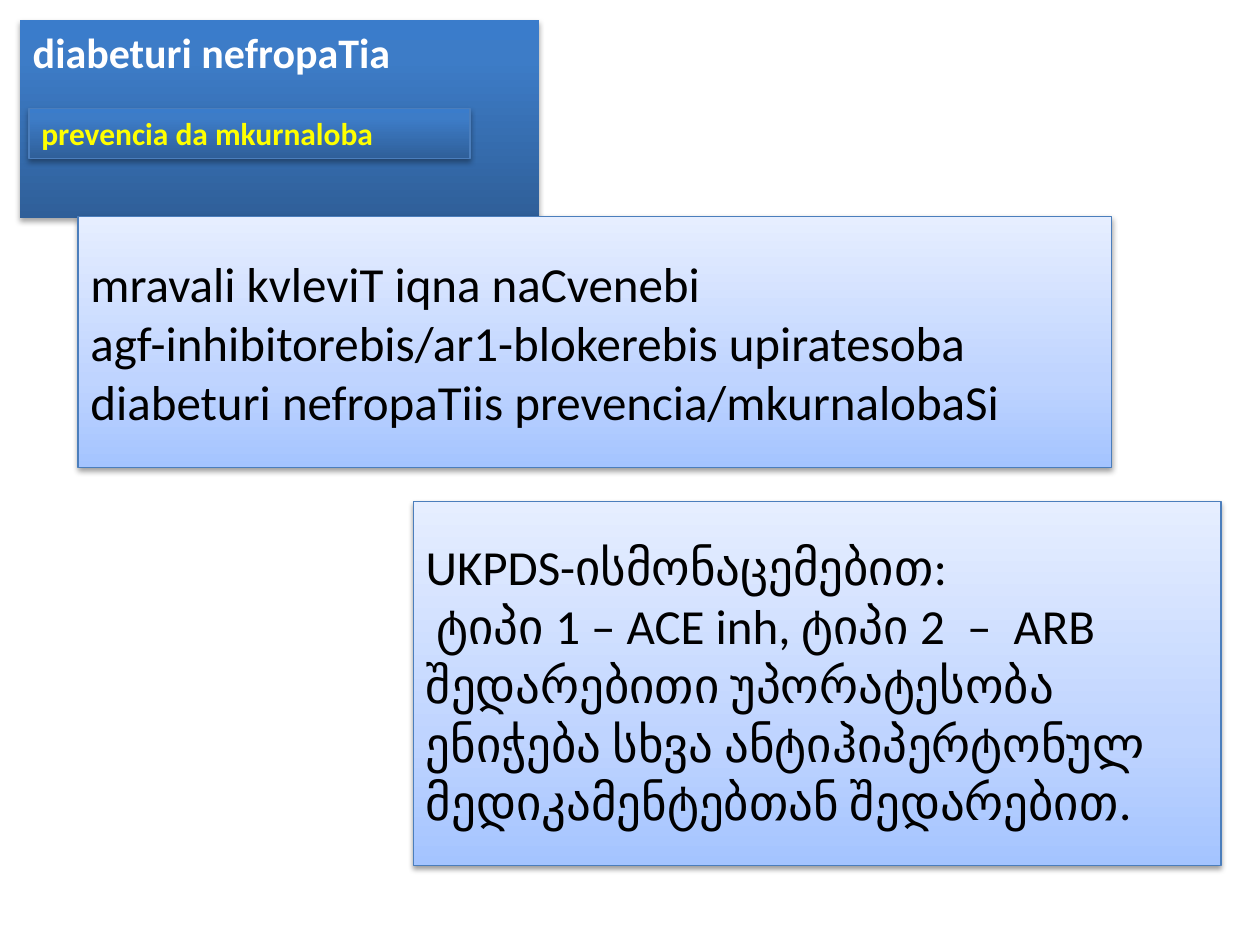
from copy import deepcopy

from lxml.etree import SubElement
from pptx import Presentation
from pptx.dml.color import RGBColor
from pptx.enum.shapes import MSO_SHAPE as Preset
from pptx.enum.text import MSO_ANCHOR as Anchor, MSO_AUTO_SIZE as AutoSize, PP_ALIGN as Align
from pptx.oxml.ns import qn
from pptx.util import Inches, Pt

BLACK = RGBColor(0x00, 0x00, 0x00)
WHITE = RGBColor(0xFF, 0xFF, 0xFF)
YELLOW = RGBColor(0xFF, 0xFF, 0x00)
BORDER = RGBColor(0x4B, 0x7E, 0xBC)
DARK_STOPS = [(0, RGBColor(0x2F, 0x5F, 0x99)), (0.8, RGBColor(0x3D, 0x7C, 0xC7)),
              (1, RGBColor(0x3A, 0x7C, 0xCB))]
LIGHT_STOPS = [(0, RGBColor(0xA4, 0xC4, 0xFF)), (0.35, RGBColor(0xBF, 0xD4, 0xFF)),
               (1, RGBColor(0xE6, 0xEE, 0xFF))]

TITLE = "diabeturi nefropaTia"
SUBTITLE = "prevencia da mkurnaloba"
STUDIES = ("mravali kvleviT iqna naCvenebi agf-inhibitorebis/ar1-blokerebis "
           "upiratesoba diabeturi nefropaTiis prevencia/mkurnalobaSi")
UKPDS = ["UKPDS-ისმონაცემებით:",
         " ტიპი 1 – ACE inh, ტიპი 2  –  ARB  შედარებითი უპორატესობა ენიჭება "
         "სხვა ანტიჰიპერტონულ მედიკამენტებთან შედარებით."]


def paint_gradient(shape, stops):
    """Fill the shape with a three-stop gradient running upwards."""
    shape.fill.gradient()
    shape.fill.gradient_angle = 90
    stop_list = shape._element.spPr.find(qn("a:gradFill")).find(qn("a:gsLst"))
    stop_list.append(deepcopy(stop_list[-1]))
    for stop, (position, color) in zip(shape.fill.gradient_stops, stops):
        stop.position = position
        stop.color.rgb = color


def cast_shadow(shape, distance, opacity):
    """Give the shape a soft black shadow straight below it."""
    shape.shadow.inherit = False
    effects = shape._element.spPr.find(qn("a:effectLst"))
    shadow = SubElement(effects, qn("a:outerShdw"), blurRad=str(Pt(3.1)),
                        dist=str(Pt(distance)), dir="5400000", rotWithShape="0")
    color = SubElement(shadow, qn("a:srgbClr"), val="000000")
    SubElement(color, qn("a:alpha"), val=str(opacity * 1000))


def place(shape, left, top, width, height):
    """Move and size the shape in inches."""
    shape.left, shape.top = Inches(left), Inches(top)
    shape.width, shape.height = Inches(width), Inches(height)


def write(shape, lines, size, color, bold, anchor, auto_size):
    """Write left-aligned paragraphs into the shape."""
    frame = shape.text_frame
    frame.text = "\n".join(lines)
    frame.word_wrap = True
    frame.auto_size = auto_size
    frame.vertical_anchor = anchor
    for paragraph in frame.paragraphs:
        paragraph.alignment = Align.LEFT
        paragraph.space_before = Pt(0)
        paragraph.line_spacing = 1.0
        font = paragraph.font
        font.name, font.size, font.bold = "Calibri", Pt(size), bold
        font.color.rgb = color


def add_box(slide, box):
    """Add a thinly outlined rectangle."""
    shape = slide.shapes.add_shape(Preset.RECTANGLE, *map(Inches, box))
    shape.line.color.rgb = BORDER
    shape.line.width = Pt(0.75)
    return shape


def style_heading(shape, text, size, color):
    """Format the shape as a dark blue heading bar."""
    paint_gradient(shape, DARK_STOPS)
    cast_shadow(shape, 1.8, 35)
    write(shape, [text], size, color, True, Anchor.TOP, AutoSize.SHAPE_TO_FIT_TEXT)


def add_panel(slide, box, lines, auto_size):
    """Add a light blue panel of body text."""
    panel = add_box(slide, box)
    paint_gradient(panel, LIGHT_STOPS)
    cast_shadow(panel, 1.6, 38)
    write(panel, lines, 28, BLACK, False, Anchor.MIDDLE, auto_size)


def main():
    """Build the slide and save it."""
    deck = Presentation()
    deck.slide_width, deck.slide_height = Inches(10), Inches(7.5)
    slide = deck.slides.add_slide(deck.slide_layouts[5])

    title = slide.shapes.title
    place(title, 0.16, 0.16, 4.12, 0.5)
    title.line.fill.background()
    style_heading(title, TITLE, 24, WHITE)

    subtitle = add_box(slide, (0.23, 0.86, 3.5, 0.4))
    style_heading(subtitle, SUBTITLE, 18, YELLOW)

    add_panel(slide, (0.62, 1.72, 8.2, 1.99), [STUDIES], AutoSize.SHAPE_TO_FIT_TEXT)
    add_panel(slide, (3.28, 3.98, 6.41, 2.89), UKPDS, AutoSize.NONE)
    deck.save("out.pptx")


if __name__ == "__main__":
    main()
